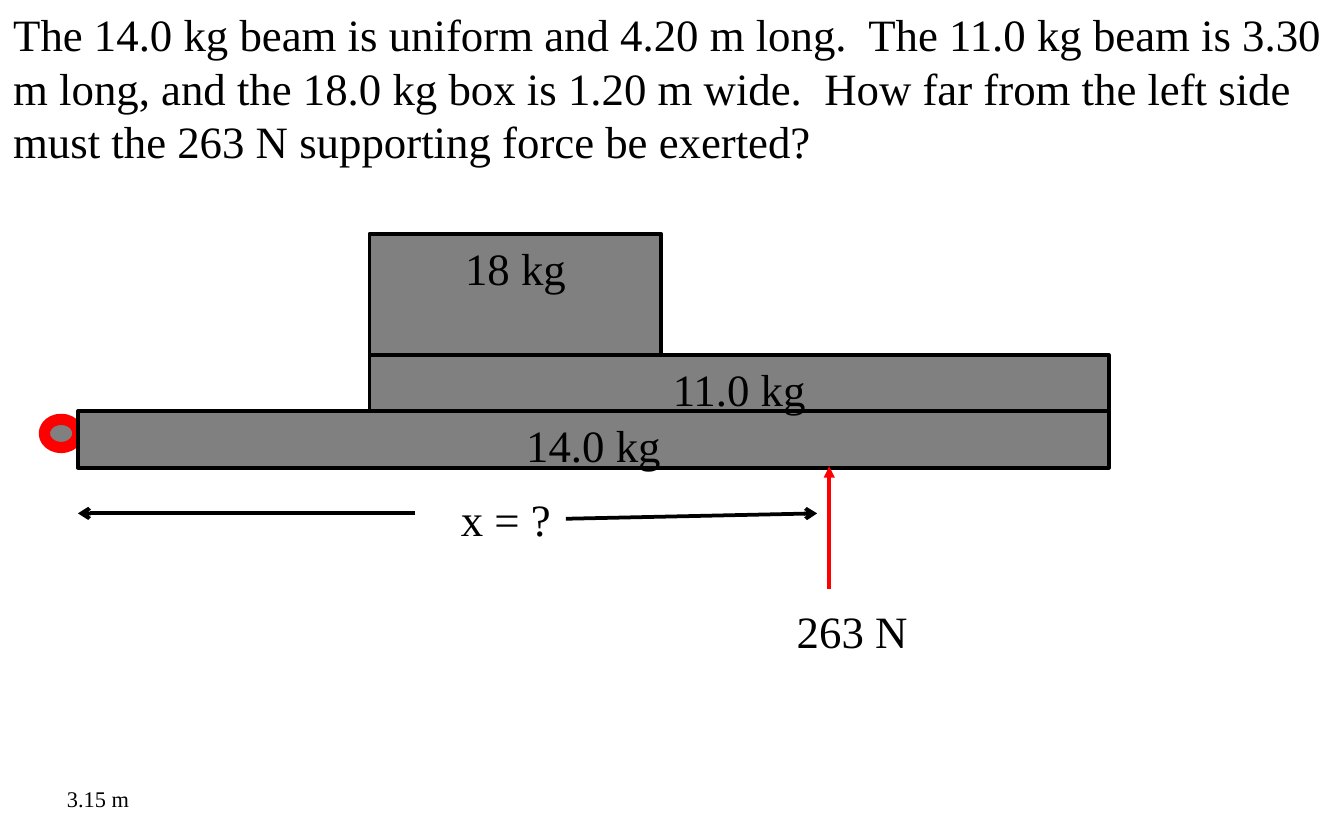
from lxml import etree
from pptx import Presentation
from pptx import util as u
from pptx.dml.color import RGBColor
from pptx.enum import shapes, text
from pptx.oxml.ns import qn

BLACK = RGBColor(0, 0, 0)
GRAY = RGBColor(0x80, 0x80, 0x80)
RED = RGBColor(0xFF, 0, 0)
FONT = {"name": "Times New Roman", "size": u.Pt(24)}


def place(box):
    return [u.Inches(v) for v in box]


def write(shape, words, wrap=True, align=None, **style):
    frame = shape.text_frame
    frame.word_wrap = wrap
    frame.vertical_anchor = text.MSO_ANCHOR.TOP
    para = frame.paragraphs[0]
    para.text = words
    para.alignment = align
    for key, val in {**FONT, **style}.items():
        setattr(para.font, key, val)
    para.font.color.rgb = BLACK


def label(slide, box, words, wrap=False, **style):
    shape = slide.shapes.add_textbox(*place(box))
    write(shape, words, wrap, **style)
    shape.text_frame.auto_size = text.MSO_AUTO_SIZE.SHAPE_TO_FIT_TEXT
    return shape


def solid(slide, kind, box, color, width):
    shape = slide.shapes.add_shape(kind, *place(box))
    shape.shadow.inherit = False
    shape.fill.solid()
    shape.fill.fore_color.rgb = GRAY
    shape.line.color.rgb = color
    shape.line.width = u.Pt(width)
    return shape


def arrow(slide, start, end, color, head):
    line = slide.shapes.add_connector(
        shapes.MSO_CONNECTOR.STRAIGHT, *place(start + end))
    line.line.color.rgb = color
    line.line.width = u.Pt(2)
    etree.SubElement(line.line._get_or_add_ln(), qn("a:tailEnd"), type=head)
    etree.SubElement(line._element.spPr, qn("a:effectLst"))
    return line


def stack(slide, box):
    left, top, width, height = box
    right, base = left + width, top + height
    solid(slide, shapes.MSO_SHAPE.OVAL,
          (left - 0.25, base - 0.36, 0.25, 0.21), RED, 6)
    rows = [("14.0 kg", left, right, 0.42),
            ("11.0 kg", 2.75, right, 0.42),
            ("18 kg", 2.75, 4.92, 0.9)]
    for words, start, end, tall in rows:
        base -= tall
        block = solid(slide, shapes.MSO_SHAPE.RECTANGLE,
                      (start, base, end - start, tall), BLACK, 2)
        write(block, words, align=text.PP_ALIGN.CENTER)


def force(slide, box):
    left, top, width, height = box
    mid = left + 0.34
    arrow(slide, (mid, top + 0.91), (mid, top), RED, "triangle")
    label(slide, (left, top + height - 0.5, width, 0.5), "263 N")


def span(slide, box):
    left, top, width, height = box
    mid = top + 0.21
    name = label(slide, (left + 2.75, top, 0.88, height), "x = ?")
    reach = arrow(slide, (left + 3.63, top + height / 2),
                  (left + width, mid), BLACK, "arrow")
    reach.begin_connect(name, 3)
    arrow(slide, (left + 2.51, mid), (left, mid), BLACK, "arrow")


def main():
    deck = Presentation()
    deck.slide_width, deck.slide_height = place((10, 6.25))
    slide = deck.slides.add_slide(deck.slide_layouts[6])
    label(slide, (0, 0, 10, 1.31),
          "The 14.0 kg beam is uniform and 4.20 m long.  The 11.0 kg beam "
          "is 3.30 m long, and the 18.0 kg box is 1.20 m wide.  How far from "
          "the left side must the 263 N supporting force be exerted?",
          wrap=True)
    stack(slide, (0.58, 1.74, 7.67, 1.74))
    force(slide, (5.83, 3.47, 1.03, 1.47))
    span(slide, (0.58, 3.61, 5.5, 0.5))
    label(slide, (0.4, 5.79, 0.67, 0.3), "3.15 m", size=u.Pt(12))
    deck.save("out.pptx")


if __name__ == "__main__":
    main()
